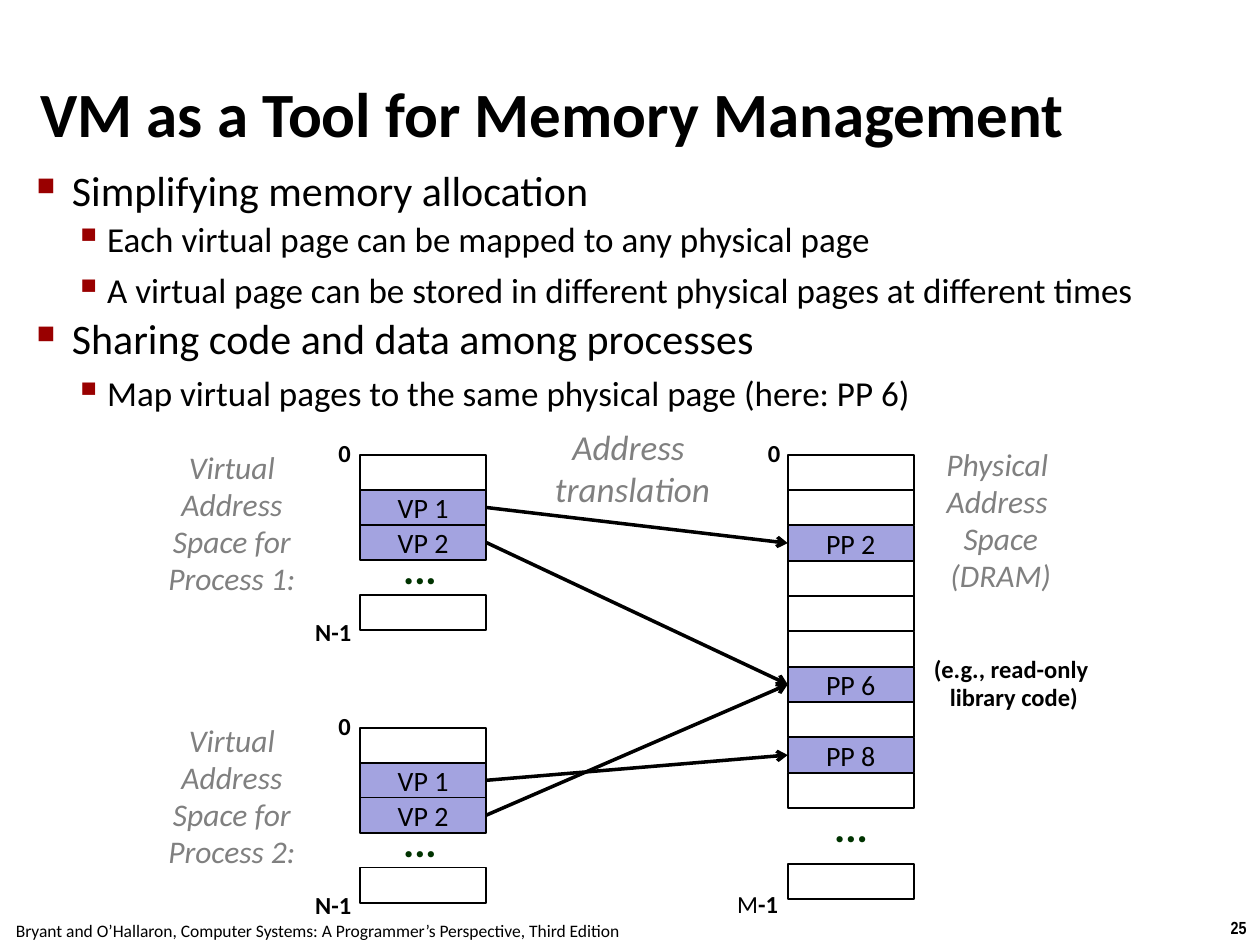
from lxml.etree import SubElement
from pptx import Presentation
from pptx.dml.color import RGBColor
from pptx.enum.shapes import MSO_CONNECTOR as CONN, MSO_SHAPE as SHAPE
from pptx.enum.text import MSO_ANCHOR as ANCHOR, PP_ALIGN as ALIGN
from pptx.oxml.ns import qn
from pptx.util import Cm, Pt

BLACK = RGBColor(0x00, 0x00, 0x00)
GRAY = RGBColor(0x80, 0x80, 0x80)
GREEN = RGBColor(0x00, 0x33, 0x00)
RED = RGBColor(0x99, 0x00, 0x00)
LILAC = RGBColor(0xA3, 0xA3, 0xE0)

# Content
TITLE = "VM as a Tool for Memory Management"
BULLETS = [  # level, line spacing, text
    (0, 0.83, "Simplifying memory allocation"),
    (1, 0.88, "Each virtual page can be mapped to any physical page"),
    (1, 1.0, "A virtual page can be stored in different physical pages at different times"),
    (0, 0.83, "Sharing code and data among processes"),
    (1, 1.0, "Map virtual pages to the same physical page (here: PP 6)"),
]
LEVELS = [  # size, space before, left margin, hanging indent, bullet, bullet percent
    (24, 6, 0.71, 0.71, "■", 60),
    (20, 5, 1.42, 0.66, "▪", 110),
]
PROCESSES = [1, 2]
VIRTUAL_PAGES = {0: "", 1: "VP 1", 2: "VP 2", 4: ""}  # row: label
PHYSICAL_PAGES = {row: "" for row in range(10)} | {2: "PP 2", 6: "PP 6", 8: "PP 8"}
MAPPINGS = [  # process, virtual row, physical row
    (1, 1, 2), (1, 2, 6), (2, 2, 6), (2, 1, 8),
]
FOOTER = "Bryant and O’Hallaron, Computer Systems: A Programmer’s Perspective, Third Edition"

# Layout in centimetres
TOP = 9.17
PROCESS_STEP = 5.5
PAGE_W, PAGE_H = 2.54, 0.71
VIRTUAL_X, VIRTUAL_PITCH = 7.26, 0.705
PHYSICAL_X, PHYSICAL_PITCH = 15.88, 0.712
PHYSICAL_LAST = 17.42

prs = Presentation()
prs.slide_width, prs.slide_height = Cm(25.4), Cm(19.05)
s = prs.slides.add_slide(prs.slide_layouts[6])


def add_run(p, text, size, color=BLACK, bold=False, italic=False, font="Calibri"):
    r = p.add_run()
    r.text = text
    r.font.name, r.font.size = font, Pt(size)
    r.font.bold, r.font.italic = bold, italic
    r.font.color.rgb = color


def add_box(x, y, w, h, wrap=False, inset=None):
    tf = s.shapes.add_textbox(Cm(x), Cm(y), Cm(w), Cm(h)).text_frame
    tf.word_wrap = wrap
    if inset is not None:
        tf.margin_left = tf.margin_right = tf.margin_top = tf.margin_bottom = Cm(inset)
    return tf


def add_label(x, y, w, h, lines, size, spacing=0.98, before=0, wrap=False, **style):
    tf = add_box(x, y, w, h, wrap)
    for i, line in enumerate(lines):
        p = tf.add_paragraph() if i else tf.paragraphs[0]
        p.alignment, p.line_spacing, p.space_before = ALIGN.CENTER, spacing, Pt(before)
        add_run(p, line, size, **style)
    return tf


def add_caption(x, y, w, lines):
    add_label(x, y, w, 3.25, lines, 18, wrap=True, color=GRAY, italic=True)


def add_zero(x, y):
    add_label(x, y, 0.79, 0.84, ["0"], 14, bold=True)


def add_dots(x, y):
    add_label(x, y, 1.19, 1.14, ["..."], 24, spacing=0.88, before=9, color=GREEN, bold=True)


def add_page(x, y, text=""):
    sp = s.shapes.add_shape(SHAPE.RECTANGLE, Cm(x), Cm(y), Cm(PAGE_W), Cm(PAGE_H))
    sp.shadow.inherit = False
    sp.line.color.rgb, sp.line.width = BLACK, Pt(1)
    if not text:
        sp.fill.background()
        return sp
    sp.fill.solid()
    sp.fill.fore_color.rgb = LILAC
    tf = sp.text_frame
    tf.vertical_anchor = ANCHOR.MIDDLE
    p = tf.paragraphs[0]
    p.alignment = ALIGN.CENTER
    add_run(p, text, 16)
    return sp


def add_pages(x, top, pitch, pages):
    return {row: add_page(x, top + row * pitch, text) for row, text in pages.items()}


def add_arrow(start, end):
    c = s.shapes.add_connector(CONN.STRAIGHT, 0, 0, 0, 0)
    c.begin_connect(start, 3)
    c.end_connect(end, 1)
    c.line.color.rgb, c.line.width = BLACK, Pt(2)
    SubElement(c.line._get_or_add_ln(), qn("a:tailEnd"), type="arrow")
    SubElement(c._element.spPr, qn("a:effectLst"))


def add_bullet(p, level):
    size, before, left, hanging, char, percent = LEVELS[level]
    p.level, p.space_before = level, Pt(before)
    pPr = p._p.get_or_add_pPr()
    pPr.set("marL", str(Cm(left)))
    pPr.set("indent", str(-Cm(hanging)))
    SubElement(SubElement(pPr, qn("a:buClr")), qn("a:srgbClr"), val=str(RED))
    SubElement(pPr, qn("a:buSzPct"), val=str(percent * 1000))
    SubElement(pPr, qn("a:buChar"), char=char)
    return size


# Title, bullets, footer and page number
tf = add_box(0.71, 1.47, 23.93, 1.6, wrap=True, inset=0.1)
tf.vertical_anchor = ANCHOR.MIDDLE
add_run(tf.paragraphs[0], TITLE, 36, bold=True)

tf = add_box(0.64, 3.38, 24.33, 5.28, wrap=True, inset=0.1)
for i, (level, spacing, text) in enumerate(BULLETS):
    p = tf.add_paragraph() if i else tf.paragraphs[0]
    p.line_spacing = spacing
    add_run(p, text, add_bullet(p, level))

add_label(-0.05, 18.42, 12.9, 0.69, [FOOTER], 10, spacing=1.0)
add_label(24.54, 18.36, 0.86, 0.69, ["25"], 10, spacing=1.0, bold=True, font="Arial Narrow")

# Virtual address spaces
virtual = {}
for n, process in enumerate(PROCESSES):
    top = TOP + n * PROCESS_STEP
    add_caption(2.77, top - 0.23, 3.81, [f"Virtual Address Space for Process {process}:"])
    add_zero(6.55, top - 0.43)
    add_label(6.1, top + 3.17, 1.24, 0.84, ["N-1"], 14, bold=True)
    virtual[process] = add_pages(VIRTUAL_X, top, VIRTUAL_PITCH, VIRTUAL_PAGES)
    add_dots(7.87, top + 1.78)

# Physical address space
add_caption(18.69, 8.89, 2.97, ["Physical ", "Address ", "Space (DRAM)"])
add_zero(15.21, TOP - 0.43)
physical = add_pages(PHYSICAL_X, TOP, PHYSICAL_PITCH, PHYSICAL_PAGES)
add_page(PHYSICAL_X, PHYSICAL_LAST)
add_dots(16.56, 16.15)
last_label = add_label(14.6, 17.83, 1.35, 0.84, ["M"], 14)
add_run(last_label.paragraphs[0], "-1", 14, bold=True)
add_label(18.42, 13.08, 4.04, 1.42, ["(e.g., read-only ", "library code)"], 14,
          wrap=True, bold=True)

# Address translation
for process, virtual_row, physical_row in MAPPINGS:
    add_arrow(virtual[process][virtual_row], physical[physical_row])
add_label(10.87, 8.46, 3.76, 1.96, ["Address ", "translation"], 20, spacing=1.0,
          color=GRAY, italic=True)

prs.save("out.pptx")
